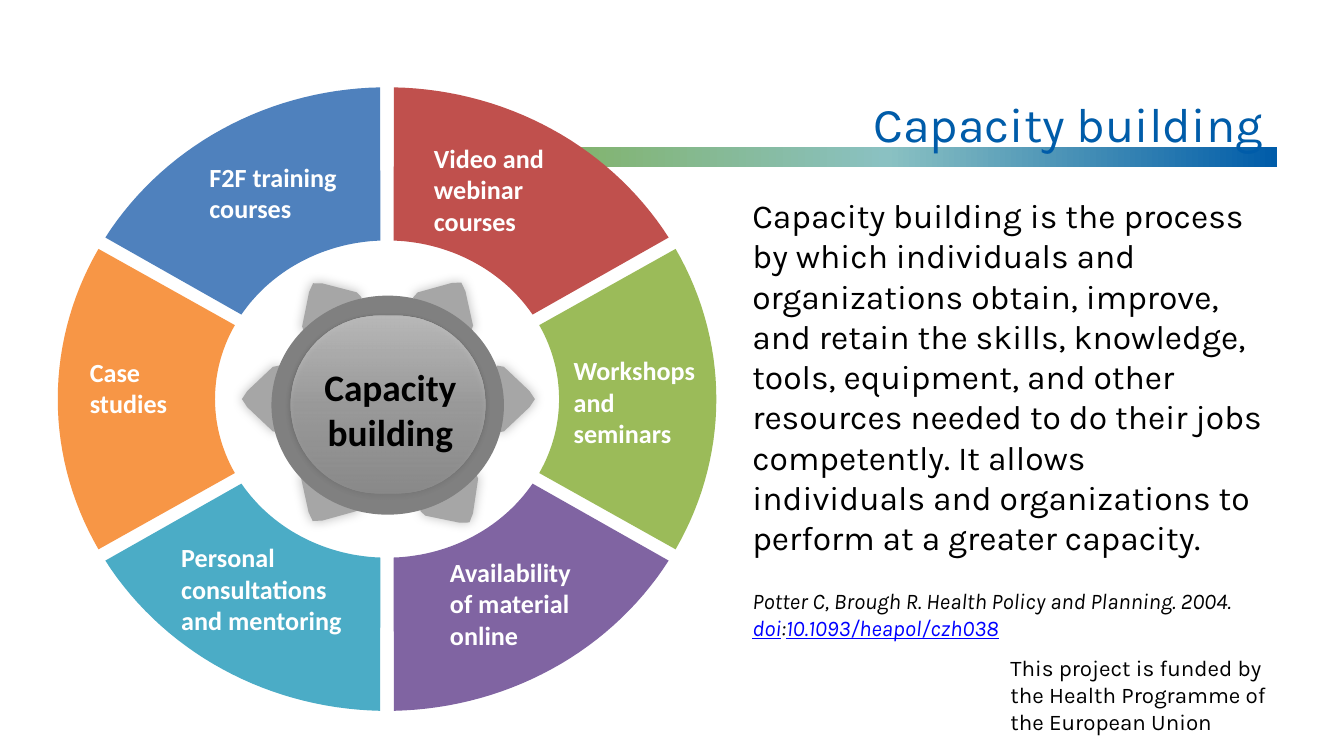
from math import cos, sin, radians
from lxml import etree
from pptx import Presentation
from pptx.dml.color import RGBColor
from pptx.enum.shapes import MSO_SHAPE as Shape
from pptx.enum.text import PP_ALIGN as Align
from pptx.oxml.ns import qn
from pptx.util import Inches, Pt

THEME = {
    "display": "Karla", "label": "Calibri",
    "blue": "005CA9", "black": "000000", "white": "FFFFFF", "link": "0000FF",
    "tooth": "A6A6A6", "hub": "808080",
    "bar": [(0, "80B059", 100), (50, "8AC1C2", 100), (100, "005CA9", 100)],
    "button": [(0, "E9E9E9", 15), (50, "D3D3D3", 46), (100, "B8B8B8", 100)],
    "title_size": 26, "hub_size": 20, "body_size": 18, "label_size": 14, "small_size": 12,
}

TITLE = "Capacity building"
DEFINITION = (
    "Capacity building is the process by which individuals and organizations obtain, "
    "improve, and retain the skills, knowledge, tools, equipment, and other resources "
    "needed to do their jobs competently. It allows individuals and organizations to "
    "perform at a greater capacity."
)
CITATION = [
    ("Potter C, Brough R.\u00a0Health Policy and Planning. 2004. ", False),
    ("doi", True), (":", False), ("10.1093/heapol/czh038", True),
]
FUNDING = "This project is funded by the Health Programme of the European Union"
SEGMENTS = [
    ("Video and webinar courses", "C0504D", (3.13, 1.01, 1.21, 0.81)),
    ("Workshops and seminars", "9BBB59", (4.17, 2.59, 1.14, 0.81)),
    ("Availability of material online", "8064A2", (3.25, 4.09, 1.14, 0.81)),
    ("Personal consultations and mentoring", "4BACC6", (1.25, 3.98, 1.58, 0.81)),
    ("Case studies", "F79646", (0.57, 2.6, 1, 0.57)),
    ("F2F training courses", "4F81BD", (1.46, 1.15, 1.37, 0.57)),
]
TEETH = [
    (2.6, 2.54, -122), (3.17, 2.54, -59), (3.47, 2.97, 0),
    (3.2, 3.47, 55), (2.59, 3.44, 121), (2.31, 2.97, 180),
]

WIDTH = 10
HEIGHT = WIDTH * 9 / 16
CENTER = (2.88, 2.97)
OUTER = (2.45, 2.32)
INNER = (1.28, 1.18)
OUTER_GAP, INNER_GAP = 1.2, 2.2
TOOTH_HALF = [(0, -0.14), (0.21, -0.14), (0.2, -0.2), (0.23, -0.25), (0.28, -0.24),
              (0.47, -0.06), (0.51, 0)]
TOOTH = TOOTH_HALF + [(x, -y) for x, y in reversed(TOOTH_HALF[:-1])]


def color(hex_code):
    return RGBColor.from_string(hex_code)


def paint(shape, hex_code):
    shape.shadow.inherit = False
    shape.fill.solid()
    shape.fill.fore_color.rgb = color(hex_code)
    shape.line.fill.background()


def tint(parent, hex_code, opacity):
    rgb = etree.SubElement(parent, qn("a:srgbClr"), val=hex_code)
    etree.SubElement(rgb, qn("a:alpha"), val=str(opacity * 1000))


def shade(shape, stops, angle):
    paint(shape, THEME["white"])
    solid = shape._element.spPr.find(qn("a:solidFill"))
    gradient = etree.Element(qn("a:gradFill"), rotWithShape="1")
    stop_list = etree.SubElement(gradient, qn("a:gsLst"))
    for position, hex_code, opacity in stops:
        stop = etree.SubElement(stop_list, qn("a:gs"), pos=str(position * 1000))
        tint(stop, hex_code, opacity)
    etree.SubElement(gradient, qn("a:lin"), ang=str(angle * 60000), scaled="0")
    solid.getparent().replace(solid, gradient)


def cast_shadow(shape, opacity, blur, distance, angle):
    effects = shape._element.spPr.find(qn("a:effectLst"))
    shadow = etree.SubElement(
        effects, qn("a:outerShdw"), blurRad=str(Pt(blur)), dist=str(Pt(distance)),
        dir=str(angle * 60000), algn="ctr", rotWithShape="0")
    tint(shadow, THEME["black"], opacity)


def add_preset(slide, kind, box):
    return slide.shapes.add_shape(kind, *map(Inches, box))


def add_outline(slide, points, hex_code):
    corners = [(Inches(x), Inches(y)) for x, y in points]
    builder = slide.shapes.build_freeform(*corners[0])
    builder.add_line_segments(corners[1:], close=True)
    outline = builder.convert_to_shape()
    paint(outline, hex_code)
    return outline


def style(paragraph, font, size, hex_code, bold=False, italic=False, align=Align.LEFT):
    paragraph.alignment = align
    paragraph.font.name = THEME[font]
    paragraph.font.size = Pt(THEME[size])
    paragraph.font.color.rgb = color(THEME[hex_code])
    paragraph.font.bold = bold
    paragraph.font.italic = italic


def add_text(slide, box, text, *look, **options):
    frame = slide.shapes.add_textbox(*map(Inches, box)).text_frame
    frame.word_wrap = True
    frame.text = text
    style(frame.paragraphs[0], *look, **options)
    return frame


def arc(radii, start, end, steps=30):
    angles = [radians(start + (end - start) * i / steps) for i in range(steps + 1)]
    return [(CENTER[0] + radii[0] * cos(a), CENTER[1] + radii[1] * sin(a)) for a in angles]


def draw_wheel(slide):
    for index, (_, hex_code, _) in enumerate(SEGMENTS):
        start = -90 + 60 * index
        end = start + 60
        ring = arc(OUTER, start + OUTER_GAP, end - OUTER_GAP)
        ring += arc(INNER, end - INNER_GAP, start + INNER_GAP)
        add_outline(slide, ring, hex_code)
    for x, y, turn in TEETH:
        c, s = cos(radians(turn)), sin(radians(turn))
        points = [(x + u * c - v * s, y + u * s + v * c) for u, v in TOOTH]
        cast_shadow(add_outline(slide, points, THEME["tooth"]), 25, 6, 0, 0)
    paint(add_preset(slide, Shape.OVAL, (2.02, 2.2, 1.73, 1.63)), THEME["hub"])
    for text, _, box in SEGMENTS:
        add_text(slide, box, text, "label", "label_size", "white", bold=True)
    button = add_preset(slide, Shape.ROUNDED_RECTANGLE, (2.16, 2.35, 1.45, 1.32))
    button.adjustments[0] = 0.5
    shade(button, THEME["button"], 270)
    cast_shadow(button, 38, 3.1, 1.6, 90)
    add_text(slide, (2.22, 2.66, 1.37, 0.77), TITLE, "label", "hub_size", "black",
             bold=True, align=Align.CENTER)


def draw_definition(slide):
    body = add_text(slide, (5.5, 1.4, 4, 3.05), DEFINITION, "display", "body_size", "black")
    citation = body.add_paragraph()
    citation.space_before = Pt(16)
    for text, linked in CITATION:
        run = citation.add_run()
        run.text = text
        if linked:
            run.font.underline = True
            run.font.color.rgb = color(THEME["link"])
    style(citation, "display", "small_size", "black", italic=True)


def main():
    deck = Presentation()
    deck.slide_width, deck.slide_height = Inches(WIDTH), Inches(HEIGHT)
    slide = deck.slides.add_slide(deck.slide_layouts[6])
    add_text(slide, (7.42, 4.82, 2.17, 0.71), FUNDING, "display", "small_size", "black")
    shade(add_preset(slide, Shape.RECTANGLE, (3.69, 1.09, 5.81, 0.15)), THEME["bar"], 0)
    title = add_text(slide, (0.5, 0.23, 9, 0.85), TITLE, "display", "title_size", "blue",
                     align=Align.RIGHT)
    title.margin_top = Inches(0.47)
    draw_wheel(slide)
    draw_definition(slide)
    deck.save("out.pptx")


if __name__ == "__main__":
    main()
